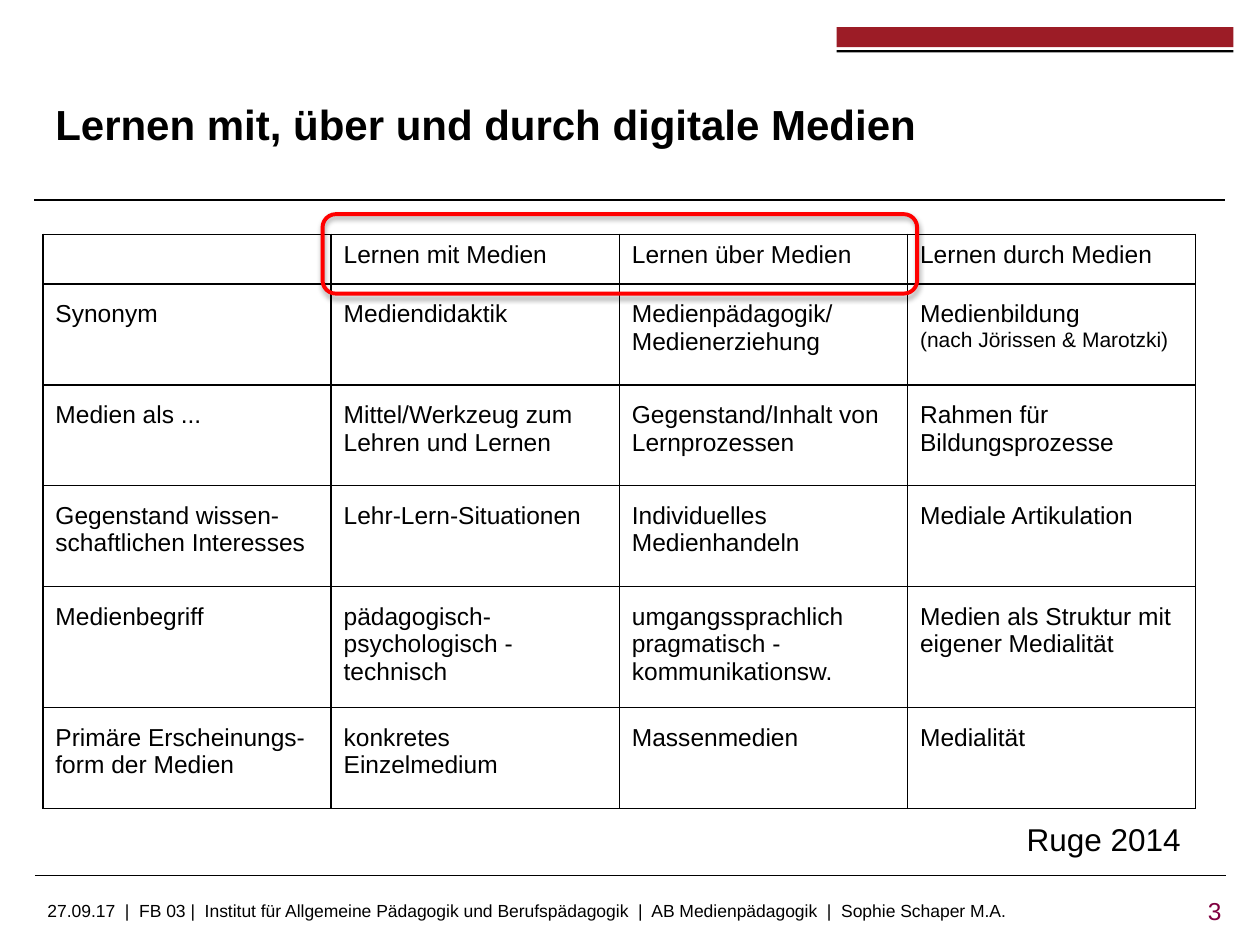
from dataclasses import dataclass

from lxml import etree
from pptx import Presentation
from pptx.dml.color import RGBColor
from pptx.enum.shapes import MSO_CONNECTOR, MSO_SHAPE
from pptx.enum.text import MSO_ANCHOR, PP_ALIGN
from pptx.oxml import parse_xml
from pptx.oxml.ns import nsdecls, qn
from pptx.util import Pt

LINE = MSO_CONNECTOR.STRAIGHT
RECTANGLE, ROUNDED = MSO_SHAPE.RECTANGLE, MSO_SHAPE.ROUNDED_RECTANGLE
TOP, MIDDLE = MSO_ANCHOR.TOP, MSO_ANCHOR.MIDDLE
LEFT, RIGHT = PP_ALIGN.LEFT, PP_ALIGN.RIGHT


@dataclass(frozen=True)
class Theme:
    font: str = "Arial"
    ink: str = "000000"
    bar: str = "9C1C26"
    number: str = "800040"
    highlight: str = "FF0000"
    title_size: int = 24
    source_size: int = 18
    body_size: int = 14
    note_size: int = 12
    footer_size: int = 10


THEME = Theme()

# Content: a cell is a list of paragraphs, "\n" is a line break
TITLE = "Lernen mit, über und durch digitale Medien"
SOURCE = "Ruge 2014"
FOOTER = ("27.09.17  |  FB 03 |  Institut für Allgemeine Pädagogik und "
          "Berufspädagogik  |  AB Medienpädagogik  |  Sophie Schaper M.A.")
PAGE_NUMBER = "3"
HEADER = ["", "Lernen mit Medien", "Lernen über Medien", "Lernen durch Medien"]
ROWS = [
    ["Synonym", "Mediendidaktik", "Medienpädagogik/\nMedienerziehung",
     "Medienbildung"],
    ["Medien als ...", "Mittel/Werkzeug zum Lehren und Lernen",
     "Gegenstand/Inhalt von Lernprozessen", "Rahmen für Bildungsprozesse"],
    ["Gegenstand wissen-\nschaftlichen Interesses", "Lehr-Lern-Situationen",
     "Individuelles Medienhandeln", "Mediale Artikulation"],
    ["Medienbegriff", "pädagogisch-psychologisch - technisch",
     "umgangssprachlich pragmatisch - kommunikationsw.",
     "Medien als Struktur mit eigener Medialität"],
    ["Primäre Erscheinungs-\nform der Medien", "konkretes Einzelmedium",
     "Massenmedien", "Medialität"],
]
NOTES = {(1, 3): "(nach Jörissen & Marotzki)"}

# Layout in points
TABLE_LEFT, TABLE_TOP = 24.5, 134
COLUMN_WIDTH, HEADER_HEIGHT, ROW_HEIGHT = 164.7, 28.3, 57.6
SIDE_INSET, HEADER_INSET, ROW_INSET = 7.2, 3.6, 9.4
BAR_LEFT, BAR_WIDTH = 478, 226.8
RULES = [(19.5, 114.3), (20, 500.5)]
RULE_LENGTH = 680.4


def color(value):
    return RGBColor.from_string(value)


def add_text(para, text, size, value=THEME.ink, bold=False):
    for index, part in enumerate(text.split("\n")):
        if index:
            para.add_line_break()
        span = para.add_run()
        span.text = part
        span.font.name = THEME.font
        span.font.size = Pt(size)
        span.font.bold = bold
        span.font.color.rgb = color(value)


def add_label(page, place, text, size, value=THEME.ink, bold=False,
              align=LEFT, anchor=MIDDLE, wrap=True, top_inset=3.6):
    box = page.shapes.add_textbox(*map(Pt, place))
    frame = box.text_frame
    frame.word_wrap = wrap
    frame.vertical_anchor = anchor
    frame.margin_top = Pt(top_inset)
    para = frame.paragraphs[0]
    para.alignment = align
    add_text(para, text, size, value, bold)


def add_bar(page, top, height, value):
    bar = page.shapes.add_shape(RECTANGLE, *map(Pt, (BAR_LEFT, top, BAR_WIDTH, height)))
    bar.shadow.inherit = False
    bar.fill.solid()
    bar.fill.fore_color.rgb = color(value)
    bar.line.fill.background()


def add_rule(page, left, top):
    rule = page.shapes.add_connector(
        LINE, Pt(left), Pt(top), Pt(left + RULE_LENGTH), Pt(top))
    rule.line.width = Pt(0.6)
    rule.line.color.rgb = color(THEME.ink)
    etree.SubElement(rule._element.spPr, qn("a:effectLst"))


def add_borders(cell):
    properties = cell._tc.get_or_add_tcPr()
    for index, side in enumerate(("lnL", "lnR", "lnT", "lnB")):
        properties.insert(index, parse_xml(
            f'<a:{side} {nsdecls("a")} w="{Pt(1)}"><a:solidFill>'
            f'<a:srgbClr val="{THEME.ink}"/></a:solidFill></a:{side}>'))


def add_comparison(page):
    rows = [HEADER] + ROWS
    heights = [HEADER_HEIGHT] + [ROW_HEIGHT] * len(ROWS)
    table = page.shapes.add_table(
        len(rows), len(HEADER), Pt(TABLE_LEFT), Pt(TABLE_TOP),
        Pt(COLUMN_WIDTH * len(HEADER)), Pt(sum(heights))).table
    table.first_row = table.horz_banding = False
    for column in table.columns:
        column.width = Pt(COLUMN_WIDTH)
    for r, (texts, height) in enumerate(zip(rows, heights)):
        table.rows[r].height = Pt(height)
        for c, text in enumerate(texts):
            cell = table.cell(r, c)
            cell.fill.background()
            cell.margin_left = cell.margin_right = Pt(SIDE_INSET)
            cell.margin_top = cell.margin_bottom = Pt(ROW_INSET if r else HEADER_INSET)
            add_borders(cell)
            frame = cell.text_frame
            if text:
                add_text(frame.paragraphs[0], text, THEME.body_size)
            else:
                frame.paragraphs[0].font.size = Pt(THEME.body_size)
            if (r, c) in NOTES:
                add_text(frame.add_paragraph(), NOTES[r, c], THEME.note_size)


def add_highlight(page):
    frame = page.shapes.add_shape(ROUNDED, *map(Pt, (184.3, 122.4, 339.8, 45.4)))
    frame.shadow.inherit = False
    frame.fill.background()
    frame.line.color.rgb = color(THEME.highlight)
    frame.line.width = Pt(2.25)
    effects = frame._element.spPr.find(qn("a:effectLst"))
    effects.append(parse_xml(
        f'<a:outerShdw {nsdecls("a")} blurRad="{Pt(3.1)}" dist="{Pt(1.8)}" '
        f'dir="5400000" rotWithShape="0"><a:srgbClr val="{THEME.ink}">'
        '<a:alpha val="35000"/></a:srgbClr></a:outerShdw>'))


def main():
    deck = Presentation()
    deck.slide_width, deck.slide_height = Pt(720), Pt(540)
    page = deck.slides.add_slide(deck.slide_layouts[6])

    # Frame of the page
    add_bar(page, 15.6, 11.4, THEME.bar)
    add_bar(page, 28.6, 1.4, THEME.ink)
    for left, top in RULES:
        add_rule(page, left, top)
    add_label(page, (20, 511.2, 669, 18), FOOTER, THEME.footer_size)
    add_label(page, (656, 508.3, 49, 24.5), PAGE_NUMBER, THEME.body_size,
              THEME.number, align=RIGHT)

    # Title, comparison and its source
    add_label(page, (24.5, 46.8, 671, 60.5), TITLE, THEME.title_size,
              bold=True, anchor=TOP, top_inset=9.5)
    add_comparison(page)
    add_label(page, (579.6, 465.1, 103.7, 29), SOURCE, THEME.source_size,
              anchor=TOP, wrap=False)
    add_highlight(page)

    deck.save("out.pptx")


if __name__ == "__main__":
    main()
